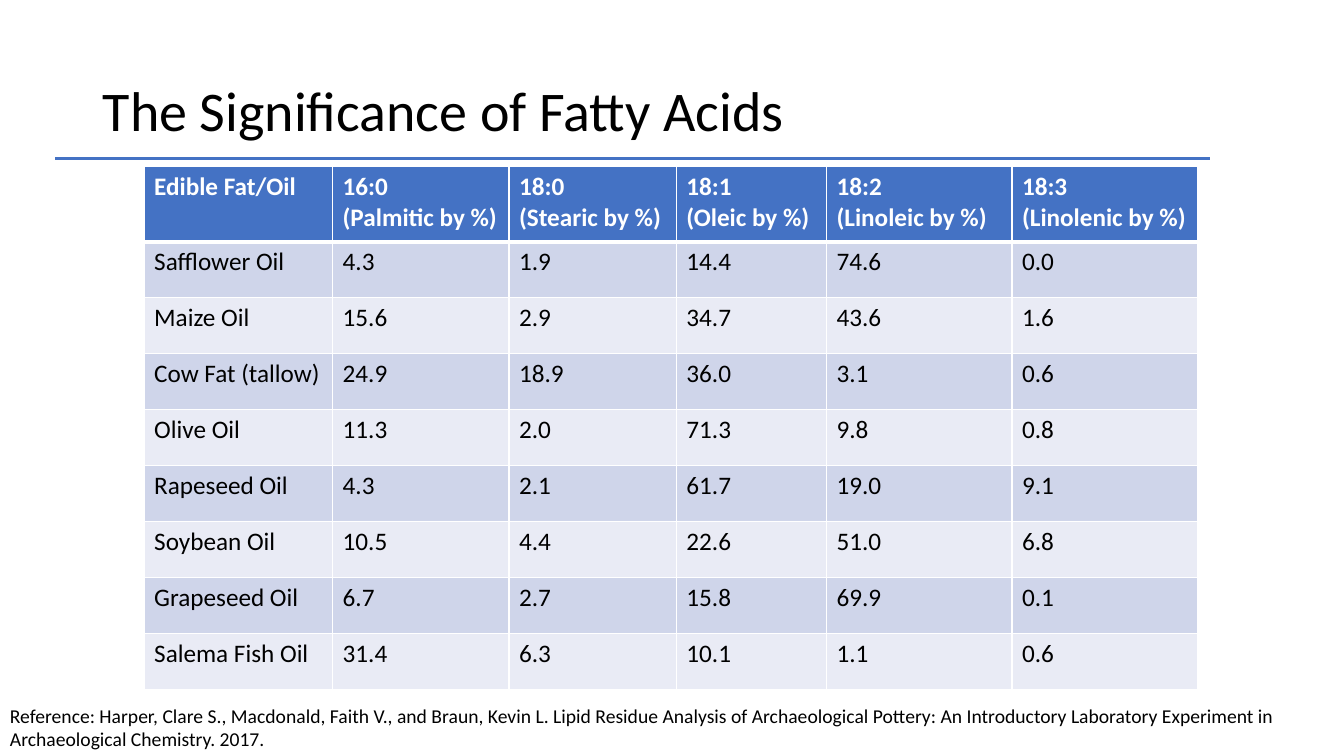
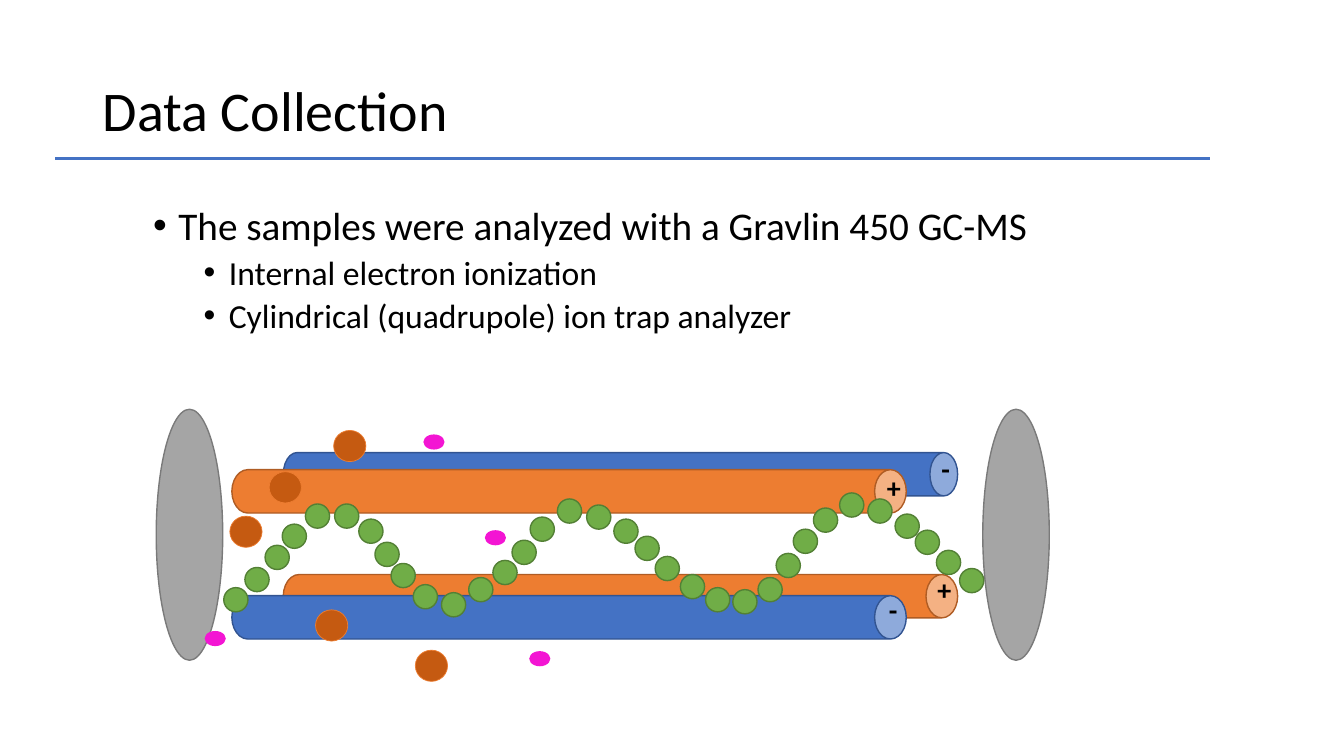
from lxml import etree
from pptx import Presentation, util as u
from pptx.dml.color import RGBColor
from pptx.enum import shapes as sh, text as tx
from pptx.oxml import ns

# Grid: 133.3 columns by 75 rows, so one cell is a tenth of an inch
COLS, ROWS = 133.33, 75
CELL = u.Inches(0.1)
FONT = "Calibri"

BLACK = RGBColor(0x00, 0x00, 0x00)
WHITE = RGBColor(0xFF, 0xFF, 0xFF)
BLUE = RGBColor(0x44, 0x72, 0xC4)
NAVY = RGBColor(0x32, 0x54, 0x91)
BAND = RGBColor(0xCF, 0xD5, 0xEA)
PALE = RGBColor(0xE9, 0xEB, 0xF5)
ORANGE = RGBColor(0xED, 0x7D, 0x31)
BROWN = RGBColor(0xAF, 0x5C, 0x24)
RUST = RGBColor(0xC5, 0x5A, 0x11)
GRAY = RGBColor(0xA5, 0xA5, 0xA5)
SLATE = RGBColor(0x7A, 0x7A, 0x7A)
GREEN = RGBColor(0x70, 0xAD, 0x47)
MOSS = RGBColor(0x53, 0x80, 0x35)
PINK = RGBColor(0xF3, 0x15, 0xD3)

# Table content
HEADS = ["Edible Fat/Oil", "16:0\n(Palmitic by %)", "18:0\n(Stearic by %)",
         "18:1\n(Oleic by %)", "18:2\n(Linoleic by %)", "18:3\n(Linolenic by %)"]
OILS = [
    ("Safflower Oil", 4.3, 1.9, 14.4, 74.6, 0.0),
    ("Maize Oil", 15.6, 2.9, 34.7, 43.6, 1.6),
    ("Cow Fat (tallow)", 24.9, 18.9, 36.0, 3.1, 0.6),
    ("Olive Oil", 11.3, 2.0, 71.3, 9.8, 0.8),
    ("Rapeseed Oil", 4.3, 2.1, 61.7, 19.0, 9.1),
    ("Soybean Oil", 10.5, 4.4, 22.6, 51.0, 6.8),
    ("Grapeseed Oil", 6.7, 2.7, 15.8, 69.9, 0.1),
    ("Salema Fish Oil", 31.4, 6.3, 10.1, 1.1, 0.6),
]
WIDTHS = [18.7, 17.5, 16.6, 14.9, 18.4, 18.4]

# Diagram content: left and top of each part
RODS = [(28.1, 44.9, BLUE, NAVY, 0.64), (23, 46.6, ORANGE, BROWN, 0.73),
        (28.1, 57, ORANGE, BROWN, 0.73), (23, 59.1, BLUE, NAVY, 0.73)]
SIGNS = [("+", 87, 46.2), ("+", 92, 56.3), ("-", 92.4, 44.3), ("-", 87.2, 58.3)]
WAVE = [(22.2, 58.3), (24.3, 56.3), (26.3, 54.1), (28, 52), (30.3, 50),
        (33.2, 50), (35.6, 51.5), (37.2, 53.8), (38.8, 55.9), (41, 58),
        (43.8, 58.8), (46.5, 57.3), (48.9, 55.6), (50.8, 53.6), (52.6, 51.3),
        (55.3, 49.5), (58.2, 50.1), (60.9, 51.5), (63, 53.2), (65, 55.2),
        (67.5, 57), (70, 58.3), (72.7, 58.5), (75.2, 57.3), (77, 54.9),
        (78.7, 52.5), (80.7, 50.4), (83.3, 48.9), (86.1, 49.5), (88.8, 51),
        (90.8, 52.6), (92.9, 54.6), (95.2, 56.4)]
LOST = [(22.8, 51.2), (26.7, 46.8), (33.1, 42.7), (41.2, 64.5), (31.3, 60.5)]
SPECKS = [(20.3, 62.6), (42, 43.1), (52.5, 64.6), (48.1, 52.6)]


def grid(*vals):
    return [u.Emu(round(v * CELL)) for v in vals]


def place(item, *box):
    item.left, item.top, item.width, item.height = grid(*box)


def write(frame, words, size=18, color=BLACK, bold=False, lead=None):
    """Fill a text frame, one paragraph for each line."""
    for i, line in enumerate(words.split("\n")):
        para = frame.add_paragraph() if i else frame.paragraphs[0]
        para.alignment = tx.PP_ALIGN.LEFT
        if lead:
            para.line_spacing = lead
        run = para.add_run()
        run.text = line
        font = run.font
        font.name, font.size, font.bold = FONT, u.Pt(size), bold
        font.color.rgb = color


def label(host, words, *box, wrap=True, **form):
    item = host.add_textbox(*grid(*box))
    item.text_frame.word_wrap = wrap
    write(item.text_frame, words, **form)


def shape(host, kind, box, fill, edge=None, thick=1):
    item = host.add_shape(kind, *grid(*box))
    item.shadow.inherit = False
    item.fill.solid()
    item.fill.fore_color.rgb = fill
    if edge is None:
        item.line.fill.background()
    else:
        item.line.color.rgb = edge
        item.line.width = u.Pt(thick)
    return item


def dots(host, spots, wide, high, *look):
    for x, y in spots:
        shape(host, sh.MSO_SHAPE.OVAL, (x, y, wide, high), *look)


def bullet(para, level):
    para.level = level
    para.space_before = u.Pt(5)
    props = para._p.get_or_add_pPr()
    props.set("marL", str(u.Inches(0.75 + 0.5 * level)))
    props.set("indent", str(u.Inches(-0.25)))
    etree.SubElement(props, ns.qn("a:buFont")).set("typeface", "Arial")
    etree.SubElement(props, ns.qn("a:buChar")).set("char", "•")


def border(cell, side, thick):
    line = etree.SubElement(cell._tc.get_or_add_tcPr(), ns.qn("a:" + side),
                            w=str(u.Pt(thick)))
    fill = etree.SubElement(line, ns.qn("a:solidFill"))
    etree.SubElement(fill, ns.qn("a:srgbClr")).set("val", str(WHITE))


def start(deck, layout, title):
    """Add a slide with the shared title and rule."""
    slide = deck.slides.add_slide(deck.slide_layouts[layout])
    head = slide.shapes.title
    place(head, 9.2, 4, 115, 14.5)
    frame = head.text_frame
    frame.auto_size = tx.MSO_AUTO_SIZE.NONE
    frame.vertical_anchor = tx.MSO_ANCHOR.MIDDLE
    write(frame, title, size=40, lead=0.9)
    rule = slide.shapes.add_connector(sh.MSO_CONNECTOR.STRAIGHT,
                                      *grid(5.5, 15.7, 120, 15.7))
    rule.line.color.rgb = BLUE
    rule.line.width = u.Pt(2.25)
    etree.SubElement(rule._element.spPr, ns.qn("a:effectLst"))
    return slide


def table(slide):
    rows = [HEADS] + [[str(v) for v in oil] for oil in OILS]
    grate = slide.shapes.add_table(len(rows), len(HEADS),
                                   *grid(14.3, 16.5, sum(WIDTHS), 52)).table
    for col, wide in zip(grate.columns, WIDTHS):
        col.width = grid(wide)[0]
    for r, row in enumerate(rows):
        top = r == 0
        grate.rows[r].height = grid(7.5 if top else 5.55)[0]
        for c, words in enumerate(row):
            cell = grate.cell(r, c)
            for side in ("lnL", "lnR", "lnT", "lnB"):
                heavy = (r, side) in ((0, "lnB"), (1, "lnT"))
                border(cell, side, 3 if heavy else 1)
            cell.fill.solid()
            cell.fill.fore_color.rgb = BLUE if top else BAND if r % 2 else PALE
            write(cell.text_frame, words, color=WHITE if top else BLACK, bold=top)


def points(slide):
    body = slide.placeholders[1]
    place(body, 9.2, 20, 115, 47.6)
    frame = body.text_frame
    frame.auto_size = tx.MSO_AUTO_SIZE.NONE
    write(frame, "The samples were analyzed with a Gravlin 450 GC-MS\n"
          "Internal electron ionization\n"
          "Cylindrical (quadrupole) ion trap analyzer", size=24, lead=0.9)
    for i, para in enumerate(frame.paragraphs):
        bullet(para, min(i, 1))
    frame.paragraphs[0].runs[0].font.size = u.Pt(28)


def trap(slide):
    # Rods, end plates and their signs
    group = slide.shapes.add_group_shape().shapes
    long, thin = 66.9, 4.3
    for x, y, fill, edge, curve in RODS:
        # The upright can is turned about its centre
        box = (x + (long - thin) / 2, y - (long - thin) / 2, thin, long)
        rod = shape(group, sh.MSO_SHAPE.CAN, box, fill, edge)
        rod.adjustments[0] = curve
        rod.rotation = 90
    dots(group, [(15.5, 40.6), (97.5, 40.6)], 6.6, 24.9, GRAY, SLATE)
    for sign, x, y in SIGNS:
        label(group, sign, x, y, 3.8, 5.1, size=20, bold=True)
    # Ions in flight, lost ions and specks
    dots(slide.shapes, WAVE, 2.4, 2.4, GREEN, MOSS)
    dots(slide.shapes, LOST, 3.2, 3.1, RUST, ORANGE, 0.5)
    dots(slide.shapes, SPECKS, 2.1, 1.5, PINK)


def main():
    deck = Presentation()
    deck.slide_width, deck.slide_height = grid(COLS, ROWS)

    # Slide 1: fatty acid table
    slide = start(deck, 5, "The Significance of Fatty Acids")
    table(slide)
    label(slide.shapes, "Reference: Harper, Clare S., Macdonald, Faith V., and "
          "Braun, Kevin L. Lipid Residue Analysis of Archaeological Pottery: An "
          "Introductory Laboratory Experiment in Archaeological Chemistry. 2017.",
          0, 69.3, 135.9, 5.7, size=14)

    # Slide 2: bullets and ion trap
    slide = start(deck, 1, "Data Collection")
    points(slide)
    trap(slide)

    deck.save("out.pptx")


if __name__ == "__main__":
    main()
